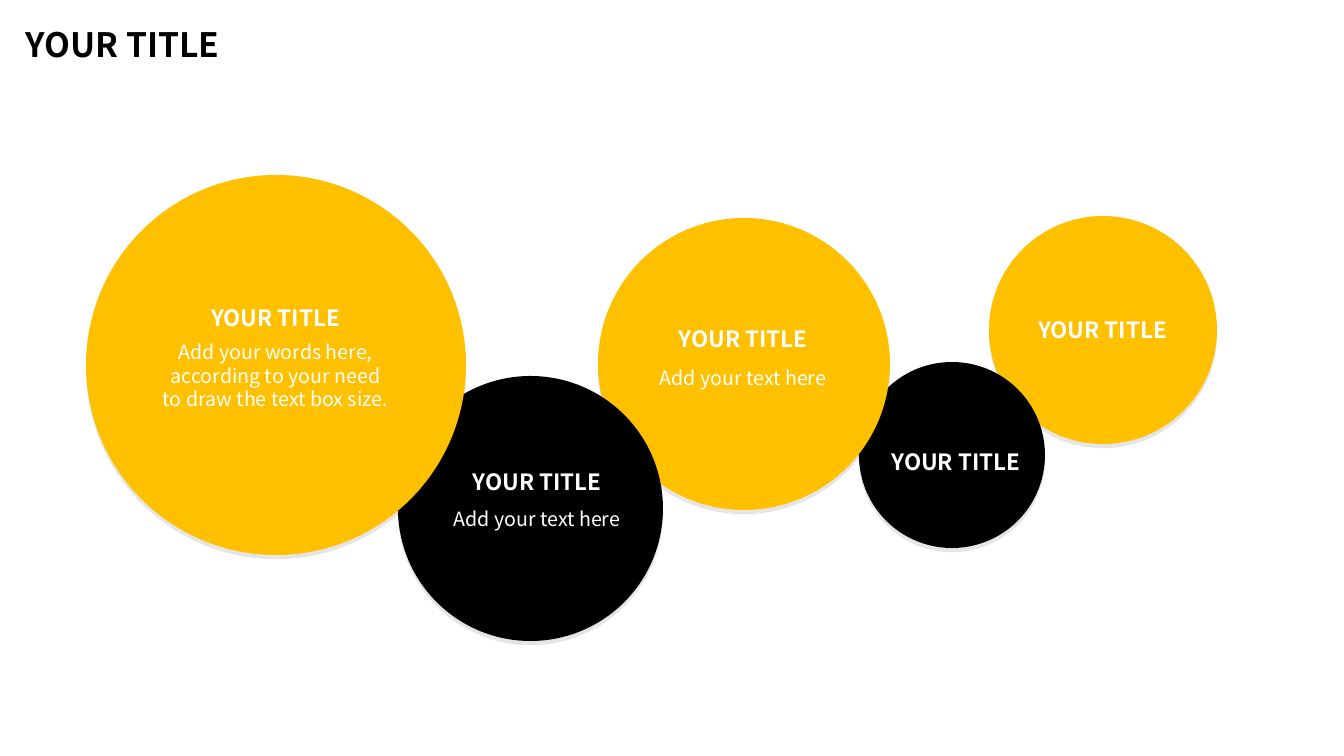
from lxml.etree import SubElement
from pptx import Presentation
from pptx.dml.color import RGBColor
from pptx.enum.shapes import MSO_SHAPE
from pptx.enum.text import PP_ALIGN
from pptx.oxml.ns import qn
from pptx.util import Pt

PX = 914400 / 100.8
FONT = "Noto Sans CJK JP"
GOLD, BLACK, WHITE = "FFC000", "000000", "FFFFFF"

CIRCLES = [
    (989, 216, 228, GOLD),
    (859, 362, 186, BLACK),
    (598, 218, 292, GOLD),
    (398, 376, 265, BLACK),
    (86, 175, 380, GOLD),
]

STYLES = {
    "heading": ({"size": Pt(24), "bold": True}, BLACK,
                {"alignment": PP_ALIGN.LEFT}),
    "title": ({"size": Pt(16), "bold": True}, WHITE,
              {"alignment": PP_ALIGN.CENTER, "line_spacing": 0.9}),
    "body": ({"size": Pt(14), "bold": False}, WHITE,
             {"alignment": PP_ALIGN.CENTER}),
    "caption": ({"size": Pt(14), "bold": False}, WHITE,
                {"alignment": PP_ALIGN.CENTER, "line_spacing": 1.2}),
}

TEXTS = [
    ("heading", (16, 19, 266, 50), ["YOUR TITLE"]),
    ("title", (130, 302, 291, 34), ["YOUR TITLE"]),
    ("body", (130, 335, 291, 82), ["Add your words here,",
                                   "according to your need",
                                   "to draw the text box size."]),
    ("title", (423, 466, 228, 34), ["YOUR TITLE"]),
    ("caption", (423, 497, 228, 38), ["Add your text here"]),
    ("title", (623, 323, 240, 34), ["YOUR TITLE"]),
    ("caption", (623, 356, 240, 38), ["Add your text here"]),
    ("title", (870, 446, 172, 34), ["YOUR TITLE"]),
    ("title", (1018, 314, 169, 34), ["YOUR TITLE"]),
]


def emu(*lengths):
    return [round(length * PX) for length in lengths]


def color(value):
    return RGBColor.from_string(value)


def set_all(target, values):
    for name, value in values.items():
        setattr(target, name, value)


def add_circle(slide, left, top, size, fill):
    circle = slide.shapes.add_shape(MSO_SHAPE.OVAL, *emu(left, top, size, size))
    circle.fill.solid()
    circle.fill.fore_color.rgb = color(fill)
    circle.line.fill.background()
    circle.shadow.inherit = False
    effects = circle._element.spPr.find(qn("a:effectLst"))
    shadow = SubElement(effects, qn("a:outerShdw"), blurRad="0",
                        dist=str(Pt(3)), dir="5400000", algn="t", rotWithShape="0")
    tint = SubElement(shadow, qn("a:srgbClr"), val=BLACK)
    SubElement(tint, qn("a:alpha"), val="10000")


def add_text(slide, style, box, lines):
    font, ink, layout = STYLES[style]
    frame = slide.shapes.add_textbox(*emu(*box)).text_frame
    frame.word_wrap = True
    frame.text = "\n".join(lines)
    for paragraph in frame.paragraphs:
        set_all(paragraph, layout)
        for run in paragraph.runs:
            set_all(run.font, {"name": FONT, **font})
            run.font.color.rgb = color(ink)


def main():
    """Build the slide of overlapping titled circles."""
    deck = Presentation()
    deck.slide_width, deck.slide_height = emu(1344, 756)
    slide = deck.slides.add_slide(deck.slide_layouts[6])
    for circle in CIRCLES:
        add_circle(slide, *circle)
    for text in TEXTS:
        add_text(slide, *text)
    deck.save("out.pptx")


if __name__ == "__main__":
    main()
